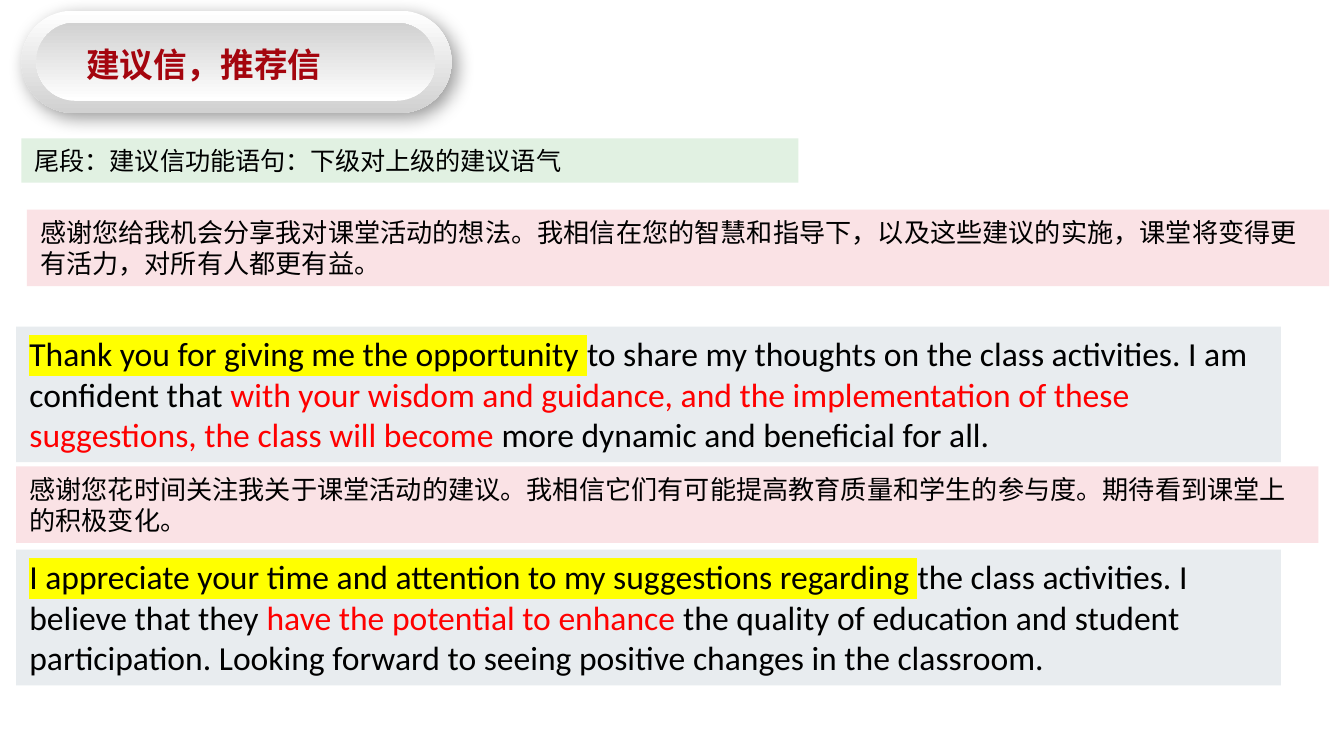
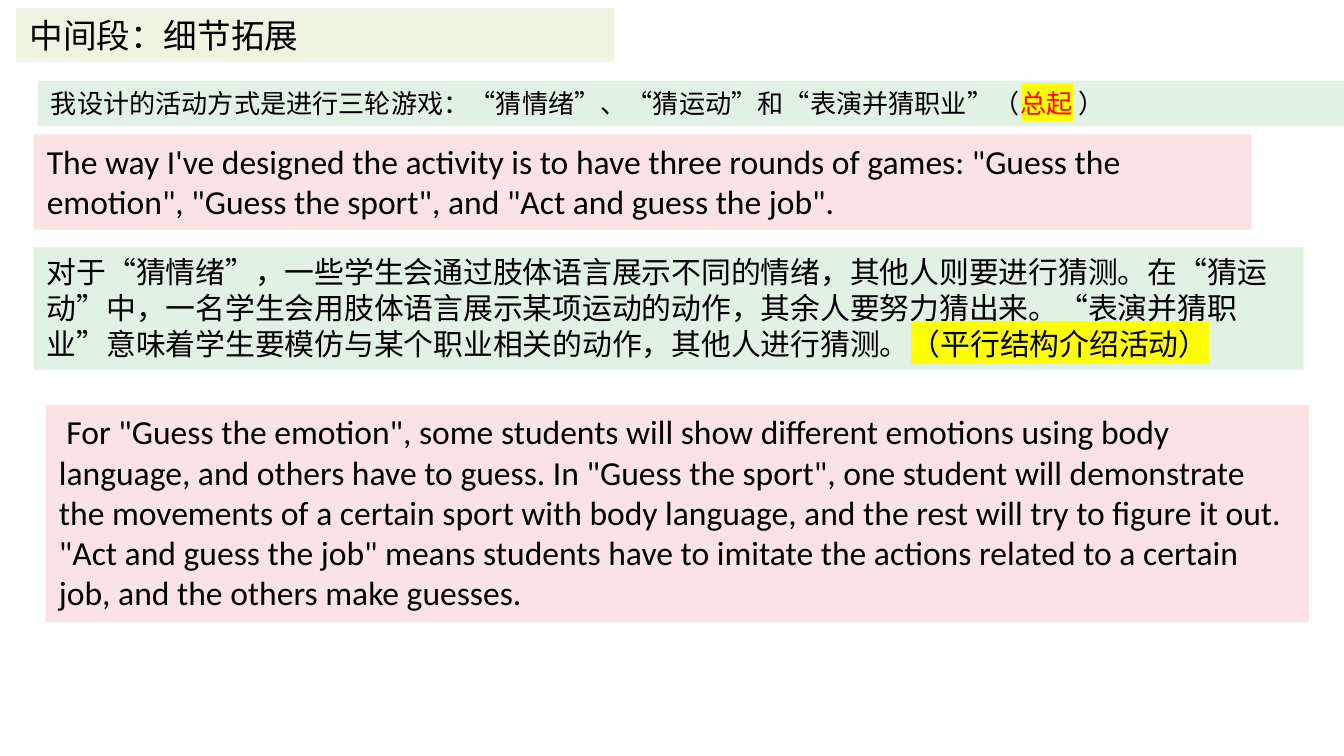
import pptx
import pptx.util
import pptx.dml.color
import pptx.enum.shapes
import pptx.enum.text
import pptx.oxml
import pptx.oxml.ns
from dataclasses import dataclass

Inches = pptx.util.Inches
Anchor = pptx.enum.text.MSO_ANCHOR
Shape = pptx.enum.shapes.MSO_SHAPE


@dataclass(frozen=True)
class Theme:
    ink: str = "000000"
    red: str = "FF0000"
    wine: str = "A4050E"
    glow: str = "FFFF00"
    white: str = "FFFFFF"
    grey: str = "D1D1D1"
    green: str = "E1F1E2"
    pink: str = "FAE2E5"
    mist: str = "E8ECEF"
    lime: str = "EFF4E2"
    body: str = "Calibri"
    head: str = "Arial"
    large: float = 18
    mid: float = 16
    small: float = 14
    tiny: float = 13.5


T = Theme()
NS = 'xmlns:a="http://schemas.openxmlformats.org/drawingml/2006/main"'


def rgb(code):
    return pptx.dml.color.RGBColor.from_string(code)


def style(run, size, color=T.ink, font=T.body, bold=False, glow=False):
    run.font.size = pptx.util.Pt(size)
    run.font.name = font
    run.font.bold = bold
    run.font.color.rgb = rgb(color)
    if glow:
        mark = pptx.oxml.parse_xml(
            f'<a:highlight {NS}><a:srgbClr val="{T.glow}"/></a:highlight>')
        run.font._element.find(pptx.oxml.ns.qn("a:solidFill")).addnext(mark)


def place(shape, box):
    shape.left, shape.top, shape.width, shape.height = map(Inches, box)


def setup(shape):
    frame = shape.text_frame
    frame.word_wrap = True
    frame.auto_size = pptx.enum.text.MSO_AUTO_SIZE.NONE
    frame.vertical_anchor = Anchor.TOP
    frame.margin_left = frame.margin_right = Inches(0.1)
    frame.margin_top = frame.margin_bottom = Inches(0.05)
    para = frame.paragraphs[0]
    para.alignment = pptx.enum.text.PP_ALIGN.LEFT
    return para


def title(slide, box, text, color=T.ink, font=T.body, bold=False, fill=None):
    shape = slide.shapes.title
    slide.shapes._spTree.append(shape._element)
    place(shape, box)
    if fill:
        shape.fill.solid()
        shape.fill.fore_color.rgb = rgb(fill)
    para = setup(shape)
    para.text = text
    style(para.runs[0], T.large, color, font, bold)


def panel(slide, box, fill, size, *parts):
    shape = slide.shapes.add_shape(Shape.RECTANGLE, *map(Inches, box))
    shape.shadow.inherit = False
    shape.fill.solid()
    shape.fill.fore_color.rgb = rgb(fill)
    shape.line.fill.background()
    para = setup(shape)
    for part in parts:
        text, look = (part, {}) if isinstance(part, str) else part
        run = para.add_run()
        run.text = text
        style(run, size, **look)


def pill(group, box, angle):
    shape = group.shapes.add_shape(Shape.ROUNDED_RECTANGLE, *map(Inches, box))
    shape.adjustments[0] = 0.5
    shape.line.fill.background()
    shape.shadow.inherit = False
    shape.fill.gradient()
    shape.fill.gradient_angle = angle
    for stop, spot, color in zip(shape.fill.gradient_stops, (0, 1), (T.white, T.grey)):
        stop.position = spot
        stop.color.rgb = rgb(color)
    return shape


def badge(slide, box, text):
    left, top, width, height = box
    group = slide.shapes.add_group_shape()
    outer = pill(group, box, 270)
    shade = pptx.oxml.parse_xml(
        f'<a:outerShdw {NS} blurRad="{pptx.util.Pt(10)}" dist="{pptx.util.Pt(4)}" '
        'dir="2700000" algn="tl" rotWithShape="0"><a:srgbClr val="000000">'
        '<a:alpha val="40000"/></a:srgbClr></a:outerShdw>')
    outer._element.spPr.find(pptx.oxml.ns.qn("a:effectLst")).append(shade)
    pill(group, (left + 0.11, top + 0.09, width - 0.23, height - 0.18), 90)
    title(slide, (left + 0.38, top + 0.2, width - 0.3, 0.4), text, T.wine, T.head, True)


GLOW = {"glow": True}
RED = {"color": T.red}


def letter(slide):
    badge(slide, (0.16, 0.08, 3.2, 0.76), "建议信，推荐信")
    panel(slide, (0.16, 1.03, 5.78, 0.33), T.green, T.tiny,
          "尾段：建议信功能语句：下级对上级的建议语气")
    panel(slide, (0.2, 1.56, 9.69, 0.57), T.pink, T.small,
          "感谢您给我机会分享我对课堂活动的想法。我相信在您的智慧和指导下，"
          "以及这些建议的实施，课堂将变得更有活力，对所有人都更有益。")
    panel(slide, (0.12, 2.43, 9.41, 1.01), T.mist, T.large,
          ("Thank you for giving me the opportunity ", GLOW),
          "to share my thoughts on the class activities. I am confident that ",
          ("with your wisdom and guidance, and the implementation of these "
           "suggestions, the class will become", RED),
          " more dynamic and beneficial for all.")
    panel(slide, (0.12, 3.47, 9.69, 0.57), T.pink, T.small,
          "感谢您花时间关注我关于课堂活动的建议。我相信它们有可能提高教育质量"
          "和学生的参与度。期待看到课堂上的积极变化。")
    panel(slide, (0.12, 4.09, 9.41, 1.01), T.mist, T.large,
          ("I appreciate your time and attention to my suggestions regarding ", GLOW),
          "the class activities. I believe that they ",
          ("have the potential to enhance ", RED),
          "the quality of education and student participation. "
          "Looking forward to seeing positive changes in the classroom.")


def detail(slide):
    title(slide, (0.12, 0.06, 4.45, 0.4), "中间段：细节拓展", fill=T.lime)
    panel(slide, (0.25, 1, 9.06, 0.71), T.pink, T.large,
          "The way I've designed the activity is to have three rounds of games: "
          '"Guess the emotion", "Guess the sport", and "Act and guess the job".')
    panel(slide, (0.28, 0.6, 10.12, 0.34), T.green, T.small,
          "我设计的活动方式是进行三轮游戏：“猜情绪”、“猜运动”和“表演并猜职业”（",
          ("总起", RED | GLOW), " ）")
    panel(slide, (0.34, 3.01, 9.4, 1.62), T.pink, T.large,
          ' For "Guess the emotion", some students will show different emotions '
          "using body language, and others have to guess. "
          'In "Guess the sport", one student will demonstrate the movements of a '
          "certain sport with body language, and the rest will try to figure it out. "
          '"Act and guess the job" means students have to imitate the actions '
          "related to a certain job, and the others make guesses.")
    panel(slide, (0.25, 1.84, 9.45, 0.91), T.green, T.mid,
          "对于“猜情绪”，一些学生会通过肢体语言展示不同的情绪，其他人则要进行猜测。"
          "在“猜运动”中，一名学生会用肢体语言展示某项运动的动作，其余人要努力猜出来。"
          "“表演并猜职业”意味着学生要模仿与某个职业相关的动作，其他人进行猜测。",
          ("（平行结构介绍活动）", GLOW))


def main():
    deck = pptx.Presentation()
    deck.slide_width = Inches(10)
    deck.slide_height = deck.slide_width * 9 // 16
    for build in (letter, detail):
        build(deck.slides.add_slide(deck.slide_layouts[5]))
    deck.save("out.pptx")


if __name__ == "__main__":
    main()
